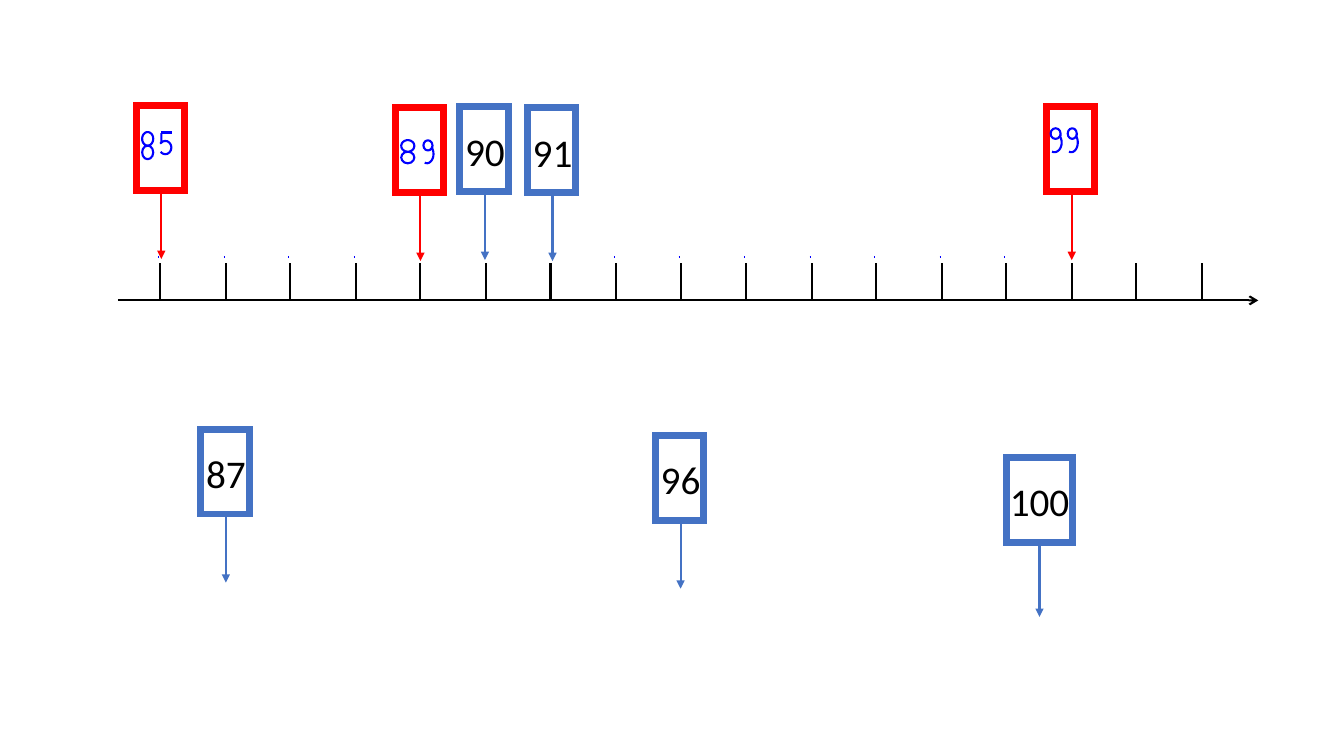
from math import cos, radians, sin
from lxml import etree
from pptx import Presentation
from pptx import util as u
from pptx.dml.color import RGBColor
from pptx.enum import shapes as sh, text as tx
from pptx.oxml.ns import qn

PX = 9144  # 100 px to the inch
HEX = {"blue": "4472C4", "red": "FF0000", "black": "000000", "ink": "0000FF"}
RGB = {name: RGBColor.from_string(code) for name, code in HEX.items()}

deck = Presentation()
deck.slide_width, deck.slide_height = 1333 * PX, 750 * PX
slide = deck.slides.add_slide(deck.slide_layouts[6])


def rule(parent, ends, color, head=None):
    line = parent.add_connector(sh.MSO_CONNECTOR.STRAIGHT, *[n * PX for n in ends])
    line.line.color.rgb = RGB[color]
    line.line.width = u.Pt(1.5)
    if head:
        etree.SubElement(line.line._get_or_add_ln(), qn("a:tailEnd"), type=head)
    etree.SubElement(line._element.spPr, qn("a:effectLst"))


def ink(parent, points):
    dots = [(round(x * PX), round(y * PX)) for x, y in points]
    pen = parent.build_freeform(*dots[0])
    pen.add_line_segments(dots[1:], close=False)
    mark = pen.convert_to_shape()
    mark.shadow.inherit = False
    mark.fill.background()
    mark.line.color.rgb = RGB["ink"]
    mark.line.width = u.Pt(1.5)


# Number line: 17 ticks at equal gaps
ticks = [round(159 + 64.56 * i) for i in range(17)]
axis = slide.shapes.add_group_shape().shapes
rule(axis, (117, 298, 1248, 298), "black", "arrow")
for x in ticks:
    rule(axis, (x, 298, x, 261), "black")

# Cards: left, top, width, arrow x, arrow start below top, colour, number
cards = [
    (456, 106, 48, 481, 82, "blue", "90"),
    (523, 107, 48, 548, 82, "blue", "91"),
    (392, 107, 48, 417, 82, "red", ""),
    (135, 105, 48, 160, 82, "red", ""),
    (1038, 106, 48, 1063, 82, "red", ""),
    (199, 426, 48, 224, 82, "blue", "87"),
    (650, 432, 48, 675, 82, "blue", "96"),
    (998, 454, 66, 1031, 88, "blue", "100"),
]
for left, top, wide, x, start, color, number in cards:
    card = slide.shapes.add_group_shape().shapes
    frame = card.add_shape(sh.MSO_SHAPE.RECTANGLE, left * PX, top * PX, wide * PX, 84 * PX)
    frame.shadow.inherit = False
    frame.fill.background()
    frame.line.color.rgb = RGB[color]
    frame.line.width = u.Pt(5)
    etree.SubElement(frame.line._get_or_add_ln(), qn("a:miter"), lim="800000")
    if number:
        box = card.add_textbox((x - 44) * PX, (top + 15) * PX, 88 * PX, 57 * PX)
        body = box.text_frame
        body.word_wrap = True
        body.auto_size = tx.MSO_AUTO_SIZE.SHAPE_TO_FIT_TEXT
        body.text = number
        para = body.paragraphs[0]
        para.alignment = tx.PP_ALIGN.CENTER
        font = para.runs[0].font
        font.name, font.size = "Calibri", u.Pt(28)
        font.color.rgb = RGB["black"]
    rule(card, (x, top + start, x, top + start + 70), color, "triangle")

# Digit strokes as chains of arcs, in percent of the digit's box:
# centre x, centre y, radius x, radius y, first angle, last angle (clockwise from right)
DIGITS = {
    "8": [[(50, 25, 50, 25, -45, -270), (50, 75, 50, 25, -90, 270), (50, 25, 50, 25, 90, -45)]],
    "9": [[(45, 23, 45, 22, 0, -360), (35, 60, 65, 40, -35, 110)]],
    "5": [
        [(55, 2, 45, 0, 180, 360)],
        [(10, 25, 0, 20, -90, 90), (45, 70, 55, 30, -140, 140)],
    ],
}
STEPS = 12  # straight pieces in each arc

# Handwritten numbers: digit, left, top, width, height
notes = [
    [("8", 398, 139, 13, 23), ("9", 420, 139, 10, 23)],
    [("8", 141, 131, 11, 27), ("5", 159, 131, 11, 22)],
    [("9", 1042, 127, 11, 24), ("9", 1059, 127, 10, 24)],
]
for note in notes:
    group = slide.shapes.add_group_shape().shapes
    for digit, left, top, wide, high in note:
        for stroke in DIGITS[digit]:
            points = []
            for cx, cy, rx, ry, first, last in stroke:
                for step in range(STEPS + 1):
                    turn = radians(first + (last - first) * step / STEPS)
                    points.append((left + wide * (cx + rx * cos(turn)) / 100,
                                   top + high * (cy + ry * sin(turn)) / 100))
            ink(group, points)

# Pen dots above the ticks that have no card
for i in (*range(4), *range(7, 14)):
    x = ticks[i] - 2
    ink(slide.shapes, [(x, 255), (x + 1, 255)])

deck.save("out.pptx")
